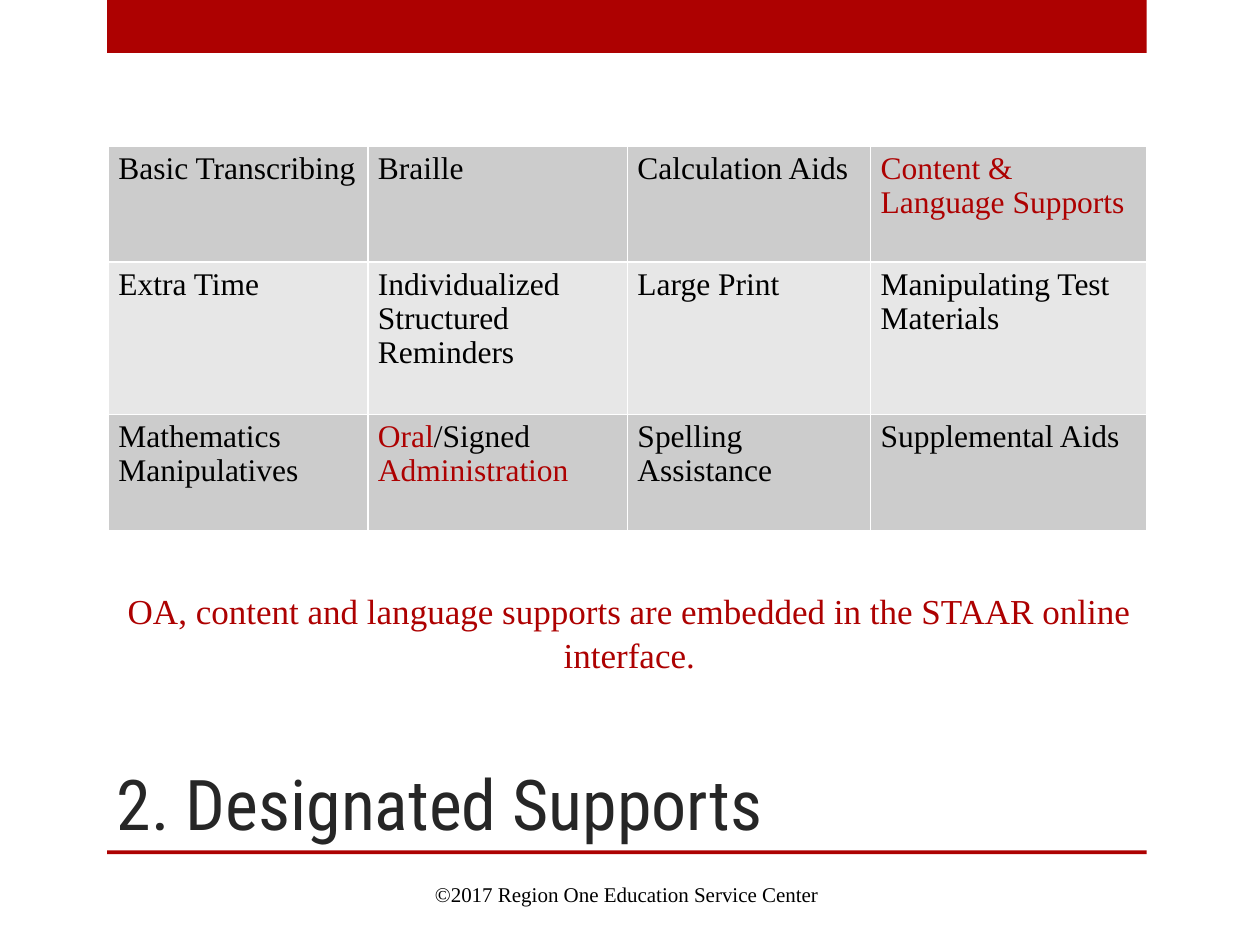
from lxml import etree
from pptx import Presentation
from pptx.dml.color import RGBColor
from pptx.enum.shapes import MSO_SHAPE
from pptx.enum.text import MSO_ANCHOR, PP_ALIGN
from pptx.oxml.ns import qn
from pptx.util import Inches, Pt

RECTANGLE = MSO_SHAPE.RECTANGLE
TOP, MIDDLE, BOTTOM = MSO_ANCHOR.TOP, MSO_ANCHOR.MIDDLE, MSO_ANCHOR.BOTTOM
LEFT, CENTER = PP_ALIGN.LEFT, PP_ALIGN.CENTER

RED, BLACK, CHARCOAL, WHITE = "AD0101", "000000", "262626", "FFFFFF"
SERIF, CONDENSED = "Times New Roman", "Roboto Condensed"
ROW_FILLS = ["CCCCCC", "E7E7E7"]

# Content: a cell is a list of (text, colour) runs
SUPPORTS = [
    [[("Basic Transcribing", BLACK)], [("Braille", BLACK)],
     [("Calculation Aids", BLACK)], [("Content & Language Supports", RED)]],
    [[("Extra Time", BLACK)], [("Individualized Structured Reminders", BLACK)],
     [("Large Print", BLACK)], [("Manipulating Test Materials", BLACK)]],
    [[("Mathematics Manipulatives", BLACK)],
     [("Oral", RED), ("/Signed ", BLACK), ("Administration", RED)],
     [("Spelling Assistance", BLACK)], [("Supplemental Aids", BLACK)]],
]
COLUMN_WIDTHS = [2.06, 2.06, 1.93, 2.19]
ROW_HEIGHTS = [0.92, 1.21, 0.92]
BANDS = [(0.85, 0, 8.25, 0.42), (0.85, 6.75, 8.25, 0.03)]
TEXTS = [
    {"at": (0.83, 5, 7.42, 1.75), "runs": [("2. Designated Supports", CHARCOAL)],
     "font": {"name": CONDENSED, "size": Pt(40)}, "anchor": BOTTOM,
     "paragraph": {"alignment": LEFT}},
    {"at": (0.86, 4.61, 8.27, 0.77),
     "runs": [("OA, content and language supports are embedded in the STAAR "
               "online interface.", RED)],
     "font": {"name": SERIF, "size": Pt(20)}, "anchor": TOP,
     "paragraph": {"alignment": CENTER, "line_spacing": 1.05}},
    {"at": (0.87, 6.9, 8.21, 0.4),
     "runs": [("©2017 Region One Education Service Center", BLACK)],
     "font": {"name": SERIF, "size": Pt(12)}, "anchor": MIDDLE,
     "paragraph": {"alignment": CENTER}},
]
CELL_FONT = {"name": SERIF, "size": Pt(18), "bold": False}
CELL_PARAGRAPH = {"alignment": LEFT, "line_spacing": 0.97}
CELL_FORMAT = {"margin_left": Inches(0.08), "margin_right": Inches(0.08),
               "margin_top": Inches(0.05), "margin_bottom": Inches(0.05),
               "vertical_anchor": TOP}


def color(value):
    return RGBColor.from_string(value)


def set_all(target, values):
    for name, value in values.items():
        setattr(target, name, value)


def fill_solid(target, value):
    target.fill.solid()
    target.fill.fore_color.rgb = color(value)


def write(frame, runs, font, paragraph_format):
    paragraph = frame.paragraphs[0]
    set_all(paragraph, paragraph_format)
    for text, run_color in runs:
        run = paragraph.add_run()
        run.text = text
        set_all(run.font, font)
        run.font.color.rgb = color(run_color)


def add_borders(cell):
    properties = cell._tc.get_or_add_tcPr()
    for index, side in enumerate(("a:lnL", "a:lnR", "a:lnT", "a:lnB")):
        line = etree.Element(qn(side), w=str(Pt(1)))
        solid = etree.SubElement(line, qn("a:solidFill"))
        etree.SubElement(solid, qn("a:srgbClr"), val=WHITE)
        properties.insert(index, line)


presentation = Presentation()
presentation.slide_width = Inches(10)
presentation.slide_height = Inches(7.5)
slide = presentation.slides.add_slide(presentation.slide_layouts[6])

# Top band and rule under the title
for band in BANDS:
    shape = slide.shapes.add_shape(RECTANGLE, *map(Inches, band))
    shape.shadow.inherit = False
    fill_solid(shape, RED)
    shape.line.fill.background()

# Table of supports
table = slide.shapes.add_table(
    len(ROW_HEIGHTS), len(COLUMN_WIDTHS), Inches(0.86), Inches(1.16),
    Inches(sum(COLUMN_WIDTHS)), Inches(sum(ROW_HEIGHTS))).table
set_all(table, {"first_row": False, "horz_banding": False})
for column, width in zip(table.columns, COLUMN_WIDTHS):
    column.width = Inches(width)
for row_index, (row, height) in enumerate(zip(table.rows, ROW_HEIGHTS)):
    row.height = Inches(height)
    for cell, runs in zip(row.cells, SUPPORTS[row_index]):
        set_all(cell, CELL_FORMAT)
        fill_solid(cell, ROW_FILLS[row_index % 2])
        add_borders(cell)
        write(cell.text_frame, runs, CELL_FONT, CELL_PARAGRAPH)

# Title, note and copyright line
for item in TEXTS:
    frame = slide.shapes.add_textbox(*map(Inches, item["at"])).text_frame
    set_all(frame, {"word_wrap": True, "vertical_anchor": item["anchor"]})
    write(frame, item["runs"], item["font"], item["paragraph"])

presentation.save("out.pptx")
